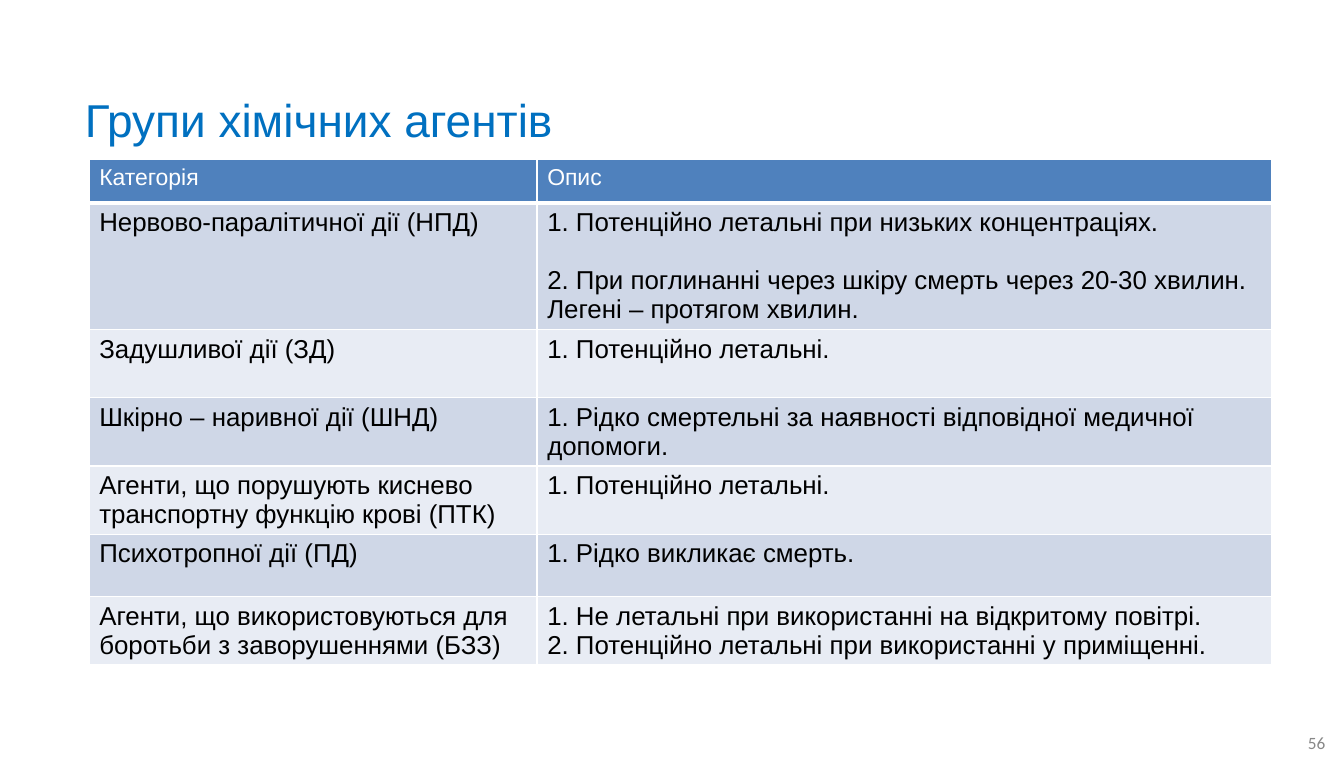
import dataclasses

import lxml.etree
import pptx
import pptx.dml.color
import pptx.enum.text
import pptx.oxml.ns
import pptx.util


@dataclasses.dataclass(frozen=True)
class Theme:
    """Colours, fonts and type sizes of the slide."""
    blue: str = "0070C0"
    header: str = "4F81BD"
    bands: tuple = ("CFD7E7", "E8ECF4")
    white: str = "FFFFFF"
    black: str = "000000"
    grey: str = "888888"
    body_font: str = "Arial"
    number_font: str = "Calibri"
    title_size: int = 32
    header_size: int = 16
    body_size: int = 18
    number_size: int = 12
    paragraph_gap: float = 20.5
    border: int = 1
    header_border: int = 3


class SlideBuilder:
    """Places elements on a grid of 100 columns by 100 rows."""

    def __init__(self, presentation, theme):
        self.theme = theme
        self.column = presentation.slide_width / 100
        self.row = presentation.slide_height / 100
        self.slide = presentation.slides.add_slide(presentation.slide_layouts[5])

    def box(self, left, top, width, height):
        """Turn grid units into left, top, width and height."""
        return (round(left * self.column), round(top * self.row),
                round(width * self.column), round(height * self.row))

    def fill_text(self, frame, lines, size, color, font=None, align="LEFT", gap=0):
        """Fill a text frame with evenly formatted paragraphs."""
        for index, line in enumerate(lines):
            paragraph = frame.paragraphs[0] if index == 0 else frame.add_paragraph()
            paragraph.alignment = getattr(pptx.enum.text.PP_ALIGN, align)
            paragraph.space_before = pptx.util.Pt(gap if index else 0)
            run = paragraph.add_run()
            run.text = line
            formats = {"name": font or self.theme.body_font,
                       "size": pptx.util.Pt(size), "bold": False}
            for name, value in formats.items():
                setattr(run.font, name, value)
            run.font.color.rgb = pptx.dml.color.RGBColor.from_string(color)

    def center(self, frame):
        """Wrap a text frame and anchor it in the middle."""
        formats = {"word_wrap": True,
                   "auto_size": pptx.enum.text.MSO_AUTO_SIZE.NONE,
                   "vertical_anchor": pptx.enum.text.MSO_ANCHOR.MIDDLE}
        for name, value in formats.items():
            setattr(frame, name, value)

    def title(self, text, *place):
        """Move and format the title placeholder."""
        shape = self.slide.shapes.title
        for name, value in zip(("left", "top", "width", "height"), self.box(*place)):
            setattr(shape, name, value)
        self.center(shape.text_frame)
        self.fill_text(shape.text_frame, [text], self.theme.title_size,
                       self.theme.blue, align="JUSTIFY")

    def page_number(self, text, *place):
        """Add the slide number."""
        frame = self.slide.shapes.add_textbox(*self.box(*place)).text_frame
        self.center(frame)
        self.fill_text(frame, [text], self.theme.number_size, self.theme.grey,
                       self.theme.number_font, "RIGHT")

    def borders(self, cell, top, bottom):
        """Draw white lines around a cell."""
        properties = cell._tc.get_or_add_tcPr()
        qualified = pptx.oxml.ns.qn
        widths = {"L": self.theme.border, "R": self.theme.border, "T": top, "B": bottom}
        for side, width in widths.items():
            line = lxml.etree.SubElement(properties, qualified(f"a:ln{side}"),
                                         w=str(pptx.util.Pt(width)))
            fill = lxml.etree.SubElement(line, qualified("a:solidFill"))
            lxml.etree.SubElement(fill, qualified("a:srgbClr"), val=self.theme.white)

    def table(self, records, left, top, widths, heights, gaps):
        """Add a table with a header and alternating bands."""
        theme = self.theme
        place = self.box(left, top, sum(widths), sum(heights))
        table = self.slide.shapes.add_table(len(records), len(widths), *place).table
        for column, width in zip(table.columns, widths):
            column.width = round(width * self.column)
        for index, (record, height) in enumerate(zip(records, heights)):
            table.rows[index].height = round(height * self.row)
            size, color, fill = (
                (theme.body_size, theme.black, theme.bands[(index - 1) % 2]) if index
                else (theme.header_size, theme.white, theme.header))
            for cell, text in zip(table.rows[index].cells, record):
                self.borders(cell, theme.header_border if index == 1 else theme.border,
                             theme.border if index else theme.header_border)
                cell.fill.solid()
                cell.fill.fore_color.rgb = pptx.dml.color.RGBColor.from_string(fill)
                self.fill_text(cell.text_frame, text.split("\n"), size, color,
                               gap=gaps.get(index, 0))


AGENT_GROUPS = [
    ("Категорія", "Опис"),
    ("Нервово-паралітичної дії (НПД)",
     "1. Потенційно летальні при низьких концентраціях.\n"
     "2. При поглинанні через шкіру смерть через 20-30 хвилин. "
     "Легені – протягом хвилин."),
    ("Задушливої дії (ЗД)", "1. Потенційно летальні."),
    ("Шкірно – наривної дії (ШНД)",
     "1. Рідко смертельні за наявності відповідної медичної допомоги."),
    ("Агенти, що порушують киснево транспортну функцію крові (ПТК)",
     "1. Потенційно летальні."),
    ("Психотропної дії (ПД)", "1. Рідко викликає смерть."),
    ("Агенти, що використовуються для боротьби з заворушеннями (БЗЗ)",
     "1. Не летальні при використанні на відкритому повітрі.\n"
     "2. Потенційно летальні при використанні у приміщенні."),
]


def main():
    """Build and save the slide."""
    presentation = pptx.Presentation()
    presentation.slide_width = pptx.util.Inches(12.99)
    presentation.slide_height = pptx.util.Inches(7.5)
    theme = Theme()
    builder = SlideBuilder(presentation, theme)
    builder.page_number("56", 94.84, 93.07, 4.54, 5.2)
    builder.title("Групи хімічних агентів", 5.54, 9.2, 74.44, 12.4)
    builder.table(AGENT_GROUPS, 6.62, 20.53, widths=(33.33, 54.66),
                  heights=(5.6, 16.3, 8.8, 8.8, 8.8, 8, 8.8),
                  gaps={1: theme.paragraph_gap})
    presentation.save("out.pptx")


if __name__ == "__main__":
    main()
